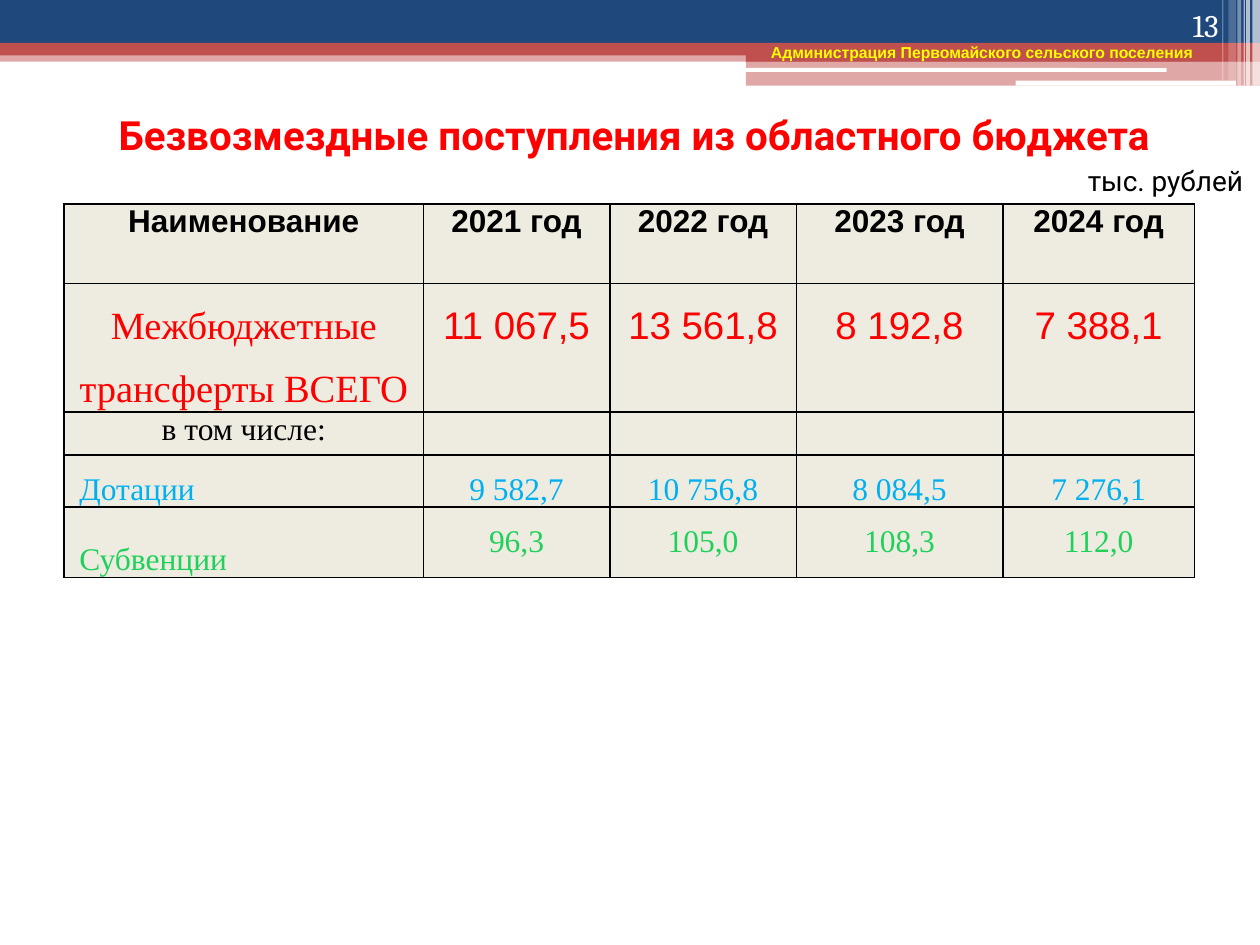
from lxml import etree
from pptx import Presentation
from pptx.dml.color import RGBColor
from pptx.enum import shapes, text
from pptx.oxml import ns
from pptx.util import Inches, Pt

HUES = {"navy": "1F497D", "brick": "C0504D", "white": "FFFFFF", "sand": "EEECE1",
        "black": "000000", "red": "FF0000", "yellow": "FFFF00",
        "sky": "00B0F0", "green": "1FD15A"}
MID, LEFT, RIGHT = text.PP_ALIGN.CENTER, text.PP_ALIGN.LEFT, text.PP_ALIGN.RIGHT
TOP, CORE, LOW = (text.MSO_ANCHOR.TOP, text.MSO_ANCHOR.MIDDLE,
                  text.MSO_ANCHOR.BOTTOM)
RECT, ROUND = shapes.MSO_SHAPE.RECTANGLE, shapes.MSO_SHAPE.ROUNDED_RECTANGLE


def paint(fill, hue):
    fill.solid()
    fill.fore_color.rgb = RGBColor.from_string(HUES[hue])


def write(para, words, font, size, hue, bold=False, align=LEFT):
    para.alignment = align
    run = para.add_run()
    run.text = words
    run.font.name, run.font.size, run.font.bold = font, Pt(size), bold
    run.font.color.rgb = RGBColor.from_string(HUES[hue])


def bar(slide, box, hue, alpha=100, kind=RECT):
    shape = slide.shapes.add_shape(kind, *map(Inches, box))
    shape.shadow.inherit = False
    paint(shape.fill, hue)
    shape.line.fill.background()
    if alpha < 100:
        tint = shape.fill._xPr.find(".//" + ns.qn("a:srgbClr"))
        etree.SubElement(tint, ns.qn("a:alpha"), val=str(alpha * 1000))


def label(slide, box, words, font, size, hue, bold=False, align=LEFT, anchor=TOP):
    frame = slide.shapes.add_textbox(*map(Inches, box)).text_frame
    frame.word_wrap = True
    frame.vertical_anchor = anchor
    write(frame.paragraphs[0], words, font, size, hue, bold, align)


def banner(slide, box):
    x, y, w, h = box
    # Full-width bands
    for top, tall, hue, alpha in ((0.4, 0.09, "brick", 50), (0, 0.34, "navy", 100),
                                  (0.34, 0.1, "brick", 100)):
        bar(slide, (x, y + top, w, tall), hue, alpha)
    # Step at the right, with white slots
    step = x + 5.92
    bar(slide, (step, y + 0.39, x + w - step, 0.1), "brick")
    bar(slide, (step, y + 0.48, x + w - step, 0.2), "brick", 50)
    bar(slide, (step - 0.01, y + 0.54, 3.35, 0.03), "white", kind=ROUND)
    bar(slide, (x + 8.06, y + 0.64, 1.75, 0.04), "white", kind=ROUND)
    # Thin upright stripes
    for left, wide, tall, alpha in ((9.94, 0.06, h, 65), (9.89, 0.03, h, 65),
                                    (9.87, 0.01, h, 60), (9.82, 0.03, h, 40),
                                    (9.75, 0.06, 0.64, 20), (9.7, 0.01, 0.64, 30)):
        bar(slide, (x + left, y, wide, tall), "white", alpha)


def heading(slide, box):
    title = slide.shapes.title
    title.left, title.top, title.width, title.height = map(Inches, box)
    frame = title.text_frame
    frame.word_wrap = True
    frame.vertical_anchor = CORE
    frame.margin_left = Inches(0.19)
    write(frame.paragraphs[0], "Безвозмездные поступления из областного бюджета",
          "Roboto", 23, "red", True, MID)


def edge(cell):
    props = cell._tc.get_or_add_tcPr()
    for side in ("lnL", "lnR", "lnT", "lnB"):
        line = etree.SubElement(props, ns.qn("a:" + side), w=str(Pt(1)))
        fill = etree.SubElement(line, ns.qn("a:solidFill"))
        etree.SubElement(fill, ns.qn("a:srgbClr"), val=HUES["black"])


def grid(slide, box):
    cols = (2.85, 1.48, 1.48, 1.64, 1.52)
    # Height, size, colour, bold, name font, value font, line spacing, cells
    serif = "Times New Roman"
    rows = (
        (0.63, 18, "black", True, "Arial", "Arial", 1,
         ("Наименование", "2021 год", "2022 год", "2023 год", "2024 год")),
        (1.02, 22, "red", False, serif, "Arial", 1.5,
         ("Межбюджетные трансферты ВСЕГО", "11 067,5", "13 561,8", "8 192,8", "7 388,1")),
        (0.34, 18, "black", False, serif, serif, 1, ("в том числе:", "", "", "", "")),
        (0.41, 18, "sky", False, serif, serif, 1.5,
         ("Дотации", "9 582,7", "10 756,8", "8 084,5", "7 276,1")),
        (0.56, 18, "green", False, serif, serif, 1.5,
         ("Субвенции", "96,3", "105,0", "108,3", "112,0")),
    )
    table = slide.shapes.add_table(len(rows), len(cols), *map(Inches, box)).table
    for col, wide in zip(table.columns, cols):
        col.width = Inches(wide)
    for r, (tall, size, hue, bold, first, other, gap, words) in enumerate(rows):
        table.rows[r].height = Inches(tall)
        for c, word in enumerate(words):
            cell = table.cell(r, c)
            cell.margin_left = cell.margin_right = 0
            cell.margin_top = cell.margin_bottom = 0
            edge(cell)
            paint(cell.fill, "sand")
            para = cell.text_frame.paragraphs[0]
            item = c == 0 and r > 2
            if item:
                cell.margin_left = Inches(0.12)
                cell.vertical_anchor = LOW
            para.line_spacing = 1.0 if item else gap
            if word:
                write(para, word, other if c else first, size, hue, bold,
                      LEFT if item else MID)
            else:
                para.font.size = Pt(size)


def main():
    deck = Presentation()
    deck.slide_width, deck.slide_height = Inches(10), Inches(7.5)
    slide = deck.slides.add_slide(deck.slide_layouts[5])
    banner(slide, (0, 0, 10, 0.68))
    heading(slide, (0.43, 0.6, 9.13, 0.94))
    grid(slide, (0.51, 1.62, 8.97, 2.96))
    # Owner, unit and page number
    label(slide, (6.02, 0.29, 3.55, 0.4),
          "Администрация Первомайского сельского поселения",
          "Arial", 9, "yellow", True)
    label(slide, (8.5, 1.31, 1.5, 0.24), "тыс. рублей", "Roboto", 16, "black",
          align=MID, anchor=CORE)
    label(slide, (8.94, 0, 0.83, 0.4), "13", "Cambria", 18, "white",
          align=RIGHT, anchor=LOW)
    deck.save("out.pptx")


if __name__ == "__main__":
    main()
